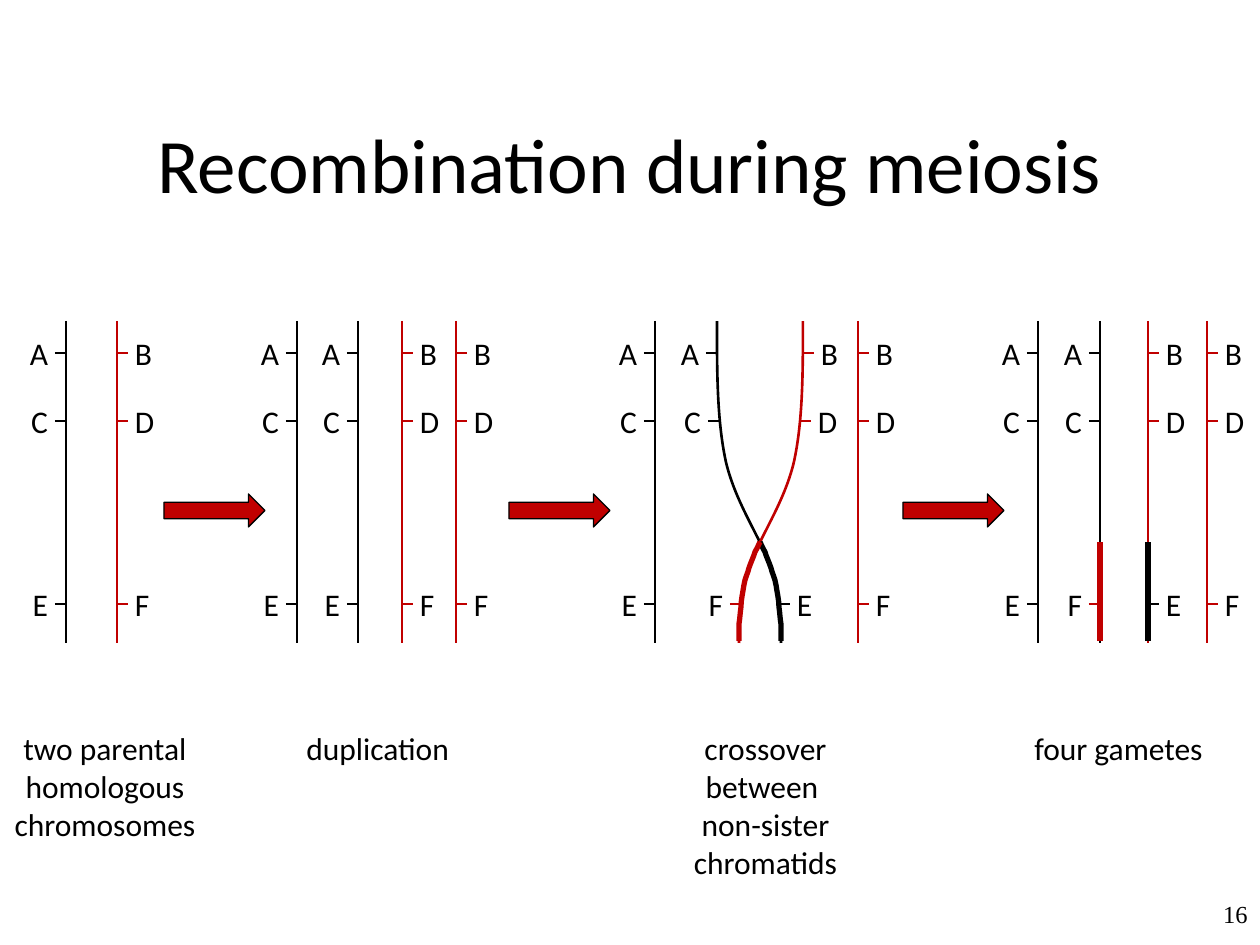
from dataclasses import dataclass

import lxml.etree
import pptx
import pptx.dml.color
import pptx.enum.shapes
import pptx.enum.text
import pptx.oxml
import pptx.oxml.ns
import pptx.slide
import pptx.text.text
import pptx.util

PX_PER_INCH = 126
ALIGN = pptx.enum.text.PP_ALIGN
Point = tuple[int, int]


@dataclass(frozen=True)
class Theme:
    black: pptx.dml.color.RGBColor = pptx.dml.color.RGBColor(0x00, 0x00, 0x00)
    red: pptx.dml.color.RGBColor = pptx.dml.color.RGBColor(0xC0, 0x00, 0x00)
    font: str = "Calibri"
    number_font: str = "Times New Roman"
    title_size: int = 44
    body_size: int = 18
    number_size: int = 14
    tick_width: float = 0.75
    strand_width: float = 1.5
    exchanged_width: float = 3


@dataclass(frozen=True)
class Strand:
    """A straight chromatid; side is -1 for labels on the left, 1 on the right."""
    x: int
    side: int
    alleles: str


@dataclass(frozen=True)
class Caption:
    text: str
    left: int
    width: int
    height: int
    align: ALIGN


THEME = Theme()
TOP, BOTTOM = 321, 643
EXCHANGE_TOP, EXCHANGE_BOTTOM = 542, 641
LOCI = (353, 421, 604)
TICK, LABEL_GAP, LABEL_WIDTH, LABEL_HEIGHT = 11, 18, 26, 38
CROSSING_X = 760

STRANDS = (
    Strand(66, -1, "ACE"), Strand(117, 1, "BDF"),
    Strand(297, -1, "ACE"), Strand(358, -1, "ACE"),
    Strand(402, 1, "BDF"), Strand(456, 1, "BDF"),
    Strand(655, -1, "ACE"), Strand(858, 1, "BDF"),
    Strand(1038, -1, "ACE"), Strand(1100, -1, "ACF"),
    Strand(1148, 1, "BDE"), Strand(1207, 1, "BDF"),
)

# Start point, then two control points and an end point for each Bézier segment.
CROSSING_CURVE = (
    (717, 321), (717, 372), (717, 421), (726, 462), (736, 504), (761, 538),
    (771, 568), (780, 599), (781, 620), (781, 643),
)
EXCHANGED_CURVE = (
    (760, 542), (761, 544), (762, 547), (765, 552), (766, 556), (769, 562),
    (771, 568), (772, 573), (775, 578), (776, 585), (777, 592), (779, 600),
    (779, 607), (780, 614), (780, 618), (781, 624), (781, 629), (781, 635),
    (781, 641),
)
CROSSING_LEFT = tuple(zip((717, 719, 741), LOCI, "ACF"))
CROSSING_RIGHT = tuple(zip((803, 800, 779), LOCI, "BDE"))

ARROW_LEFTS = (164, 509, 903)
CAPTIONS = (
    Caption("two parental\nhomologous\nchromosomes", -1, 212, 127, ALIGN.CENTER),
    Caption("duplication", 294, 212, 50, ALIGN.LEFT),
    Caption("crossover between \vnon-sister chromatids", 675, 181, 165, ALIGN.CENTER),
    Caption("four gametes", 1022, 212, 50, ALIGN.LEFT),
)


def px(length: int) -> pptx.util.Emu:
    return pptx.util.Emu(round(length * 914400 / PX_PER_INCH))


def allele_color(allele: str) -> pptx.dml.color.RGBColor:
    return THEME.black if allele in "ACE" else THEME.red


def add_line(slide: pptx.slide.Slide, start: Point, end: Point,
             color: pptx.dml.color.RGBColor, width: float) -> None:
    connector = slide.shapes.add_connector(
        pptx.enum.shapes.MSO_CONNECTOR.STRAIGHT, *map(px, start + end))
    connector.line.color.rgb = color
    connector.line.width = pptx.util.Pt(width)
    connector._element.spPr.append(pptx.oxml.parse_xml(
        f"<a:effectLst {pptx.oxml.ns.nsdecls('a')}/>"))


def add_text(slide: pptx.slide.Slide, text: str, left: int, top: int,
             width: int, height: int, align: ALIGN, size: int = THEME.body_size,
             font: str = THEME.font, inset: bool = True) -> None:
    box = slide.shapes.add_textbox(px(left), px(top), px(width), px(height))
    frame = box.text_frame
    frame.word_wrap = True
    if not inset:
        frame.margin_left = frame.margin_right = 0
        frame.margin_top = frame.margin_bottom = 0
    frame.text = text
    format_paragraphs(frame, align, size, font)


def format_paragraphs(frame: pptx.text.text.TextFrame, align: ALIGN,
                      size: int, font: str) -> None:
    for paragraph in frame.paragraphs:
        paragraph.alignment = align
        paragraph.font.size = pptx.util.Pt(size)
        paragraph.font.name = font
        paragraph.font.color.rgb = THEME.black


def add_locus(slide: pptx.slide.Slide, x: int, y: int, allele: str, side: int) -> None:
    """Draw the tick and letter of one allele beside a strand."""
    tick_start, tick_end = sorted((x, x + side * TICK))
    add_line(slide, (tick_start, y), (tick_end, y), allele_color(allele), THEME.tick_width)
    left = x + LABEL_GAP if side > 0 else x - LABEL_GAP - LABEL_WIDTH
    add_text(slide, allele, left, y - LABEL_HEIGHT // 2, LABEL_WIDTH, LABEL_HEIGHT,
             ALIGN.LEFT if side > 0 else ALIGN.RIGHT, inset=False)


def add_strand(slide: pptx.slide.Slide, strand: Strand) -> None:
    """Draw a strand; a last allele of the other colour marks an exchanged end."""
    color, end_color = map(allele_color, (strand.alleles[0], strand.alleles[-1]))
    add_line(slide, (strand.x, TOP), (strand.x, BOTTOM), color, THEME.strand_width)
    for y, allele in zip(LOCI, strand.alleles):
        add_locus(slide, strand.x, y, allele, strand.side)
    if end_color != color:
        add_line(slide, (strand.x, EXCHANGE_BOTTOM), (strand.x, EXCHANGE_TOP),
                 end_color, THEME.exchanged_width)


def add_curve(slide: pptx.slide.Slide, curve: tuple[Point, ...],
              color: pptx.dml.color.RGBColor, width: float) -> None:
    """Build a freeform through the end points, then bend its segments."""
    points = [(px(x), px(y)) for x, y in curve]
    builder = slide.shapes.build_freeform(*points[0])
    builder.add_line_segments(points[3::3], close=False)
    shape = builder.convert_to_shape()
    qn = pptx.oxml.ns.qn
    for index, segment in enumerate(list(shape._element.iter(qn("a:lnTo")))):
        bend = lxml.etree.Element(qn("a:cubicBezTo"))
        for x, y in points[3 * index + 1:3 * index + 4]:
            lxml.etree.SubElement(bend, qn("a:pt"),
                                  x=str(x - shape.left), y=str(y - shape.top))
        segment.getparent().replace(segment, bend)
    shape.shadow.inherit = False
    shape.fill.background()
    shape.line.color.rgb = color
    shape.line.width = pptx.util.Pt(width)


def add_crossover(slide: pptx.slide.Slide) -> None:
    for curve, width in ((CROSSING_CURVE, THEME.strand_width),
                         (EXCHANGED_CURVE, THEME.exchanged_width)):
        mirrored = tuple((2 * CROSSING_X - x, y) for x, y in curve)
        add_curve(slide, curve, THEME.black, width)
        add_curve(slide, mirrored, THEME.red, width)
    for side, loci in ((-1, CROSSING_LEFT), (1, CROSSING_RIGHT)):
        for x, y, allele in loci:
            add_locus(slide, x, y, allele, side)


def add_arrow(slide: pptx.slide.Slide, left: int) -> None:
    arrow = slide.shapes.add_shape(pptx.enum.shapes.MSO_SHAPE.RIGHT_ARROW,
                                   px(left), px(494), px(101), px(33))
    arrow.shadow.inherit = False
    arrow.fill.solid()
    arrow.fill.fore_color.rgb = THEME.red
    arrow.line.color.rgb = THEME.black
    arrow.line.width = pptx.util.Pt(THEME.tick_width)


def main() -> None:
    presentation = pptx.Presentation()
    presentation.slide_width, presentation.slide_height = px(1260), px(945)
    slide = presentation.slides.add_slide(presentation.slide_layouts[5])
    title = slide.shapes.title
    title.left, title.top, title.width, title.height = map(px, (94, 84, 1072, 158))
    title.text_frame.text = "Recombination during meiosis"
    title.text_frame.vertical_anchor = pptx.enum.text.MSO_ANCHOR.MIDDLE
    format_paragraphs(title.text_frame, ALIGN.CENTER, THEME.title_size, THEME.font)
    for strand in STRANDS:
        add_strand(slide, strand)
    add_crossover(slide)
    for left in ARROW_LEFTS:
        add_arrow(slide, left)
    for caption in CAPTIONS:
        add_text(slide, caption.text, caption.left, 723, caption.width,
                 caption.height, caption.align)
    add_text(slide, "16", 998, 893, 262, 53, ALIGN.RIGHT,
             THEME.number_size, THEME.number_font)
    presentation.save("out.pptx")


if __name__ == "__main__":
    main()
